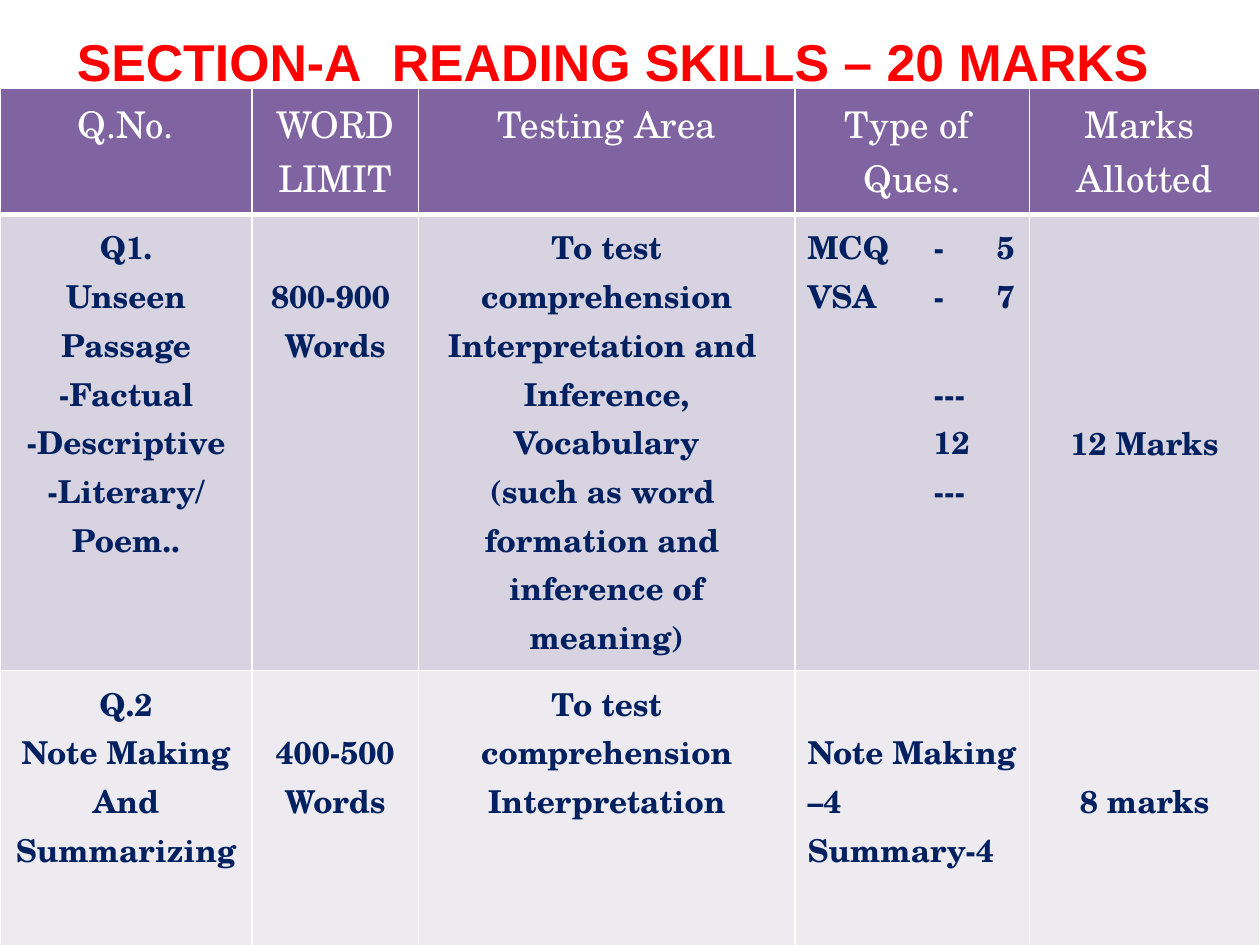
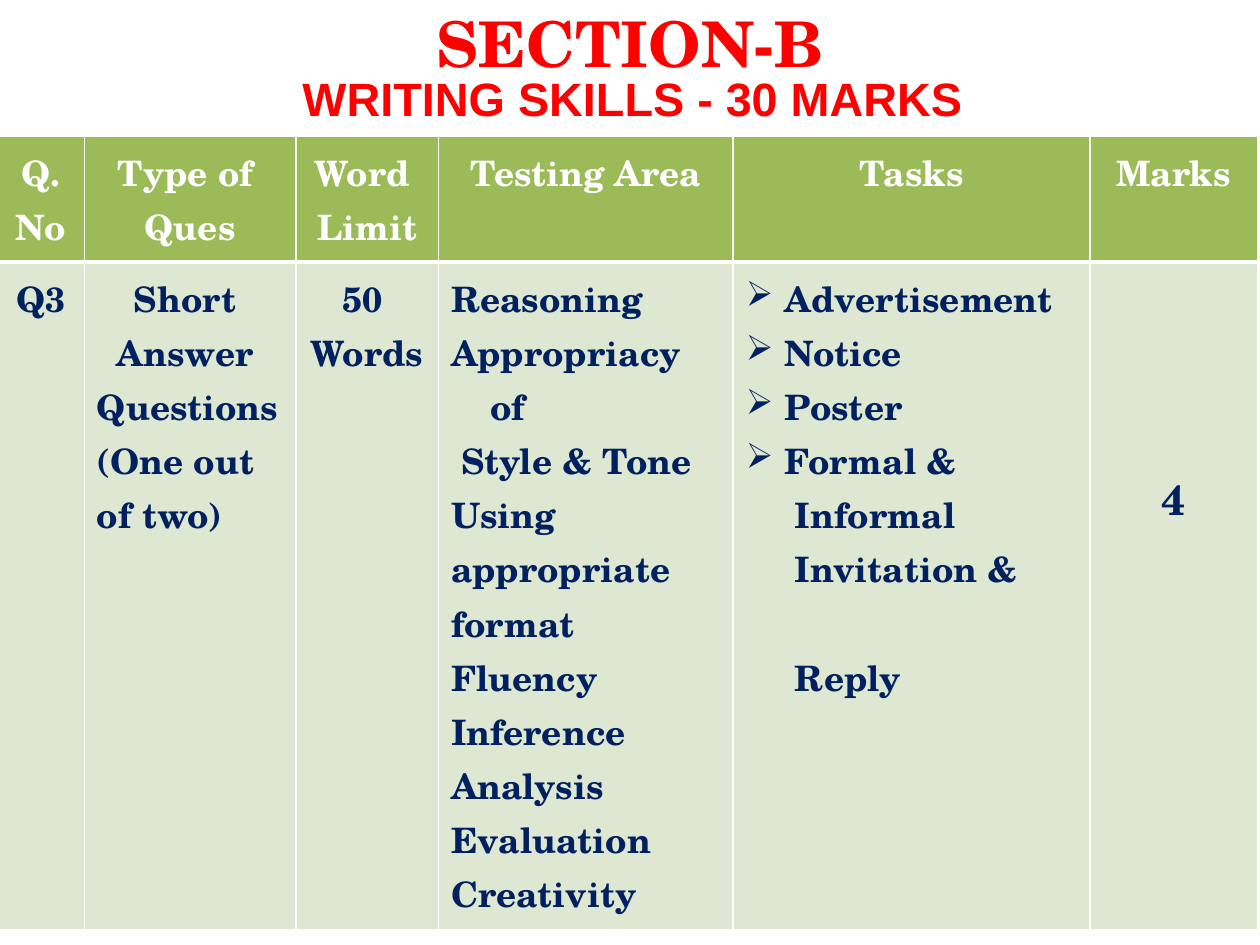
from dataclasses import dataclass
from typing import NamedTuple

from lxml import etree
from pptx import Presentation
from pptx import util as u
from pptx.dml.color import RGBColor
from pptx.enum import text
from pptx.oxml import ns

LEFT, CENTER = text.PP_ALIGN.LEFT, text.PP_ALIGN.CENTER


@dataclass(frozen=True)
class Theme:
    """Colours, fonts, type sizes and the grid shared by the slides."""
    white: str = "FFFFFF"
    red: str = "FF0000"
    navy: str = "002060"
    serif: str = "TeX Gyre Schola"
    sans: str = "Arial"
    line_height: float = 1.55
    unit: float = 0.1
    columns: int = 100
    rows: int = 75


THEME = Theme()


class Box(NamedTuple):
    """A rectangle in grid columns and rows."""
    left: float
    top: float
    width: float
    height: float


class Line(NamedTuple):
    """A paragraph with its indents in grid units."""
    text: str
    align: text.PP_ALIGN | None = None
    left: float = 0
    hang: float = 0
    bullet: str = ""
    tabs: tuple[float, ...] = ()
    lines_before: int = 0


class Cell(NamedTuple):
    """Table cell content, lowered by a number of text lines."""
    lines: list[str | Line]
    align: text.PP_ALIGN = CENTER
    lines_above: int = 0
    size: float | None = None


class Row(NamedTuple):
    """A table row with its look."""
    height: float
    cells: list[Cell]
    fill: str
    size: float
    color: str = THEME.navy
    bold: bool = True
    bottom_border: float = 1


class Grid(NamedTuple):
    """A table with its column widths."""
    left: float
    top: float
    widths: list[float]
    rows: list[Row]


def span(units: float) -> u.Length:
    """Convert grid units to a length."""
    return u.Inches(round(units * THEME.unit, 3))


def set_layout(paragraph, line: Line) -> None:
    """Set the indents, bullet and tab stops of a paragraph."""
    properties = paragraph._p.get_or_add_pPr()
    properties.set("marL", str(span(line.left)))
    properties.set("indent", str(span(-line.hang)))
    if line.bullet:
        etree.SubElement(properties, ns.qn("a:buChar"), char=line.bullet)
    else:
        etree.SubElement(properties, ns.qn("a:buNone"))
    if line.tabs:
        stops = etree.SubElement(properties, ns.qn("a:tabLst"))
        for position in line.tabs:
            etree.SubElement(stops, ns.qn("a:tab"), pos=str(span(position)), algn="l")


def write_text(frame, lines: list[str | Line], *, size: float, color: str,
               font: str = THEME.serif, bold: bool = True,
               align: text.PP_ALIGN = CENTER) -> None:
    """Fill a text frame with formatted paragraphs."""
    for index, item in enumerate(lines):
        line = item if isinstance(item, Line) else Line(item)
        paragraph = frame.add_paragraph() if index else frame.paragraphs[0]
        set_layout(paragraph, line)
        paragraph.alignment = align if line.align is None else line.align
        paragraph.space_before = u.Pt(line.lines_before * size * THEME.line_height)
        run = paragraph.add_run()
        run.text = line.text
        run.font.size, run.font.bold, run.font.name = u.Pt(size), bold, font
        run.font.color.rgb = RGBColor.from_string(color)


def write_heading(shape, box: Box, line: str | Line, *, inset: float = 1, **style) -> None:
    """Place a placeholder and write its heading."""
    shape.left, shape.top, shape.width, shape.height = map(span, box)
    frame = shape.text_frame
    frame.word_wrap = True
    frame.auto_size = text.MSO_AUTO_SIZE.NONE
    frame.vertical_anchor = text.MSO_ANCHOR.MIDDLE
    frame.margin_left = span(inset)
    write_text(frame, [line], color=THEME.red, **style)


def set_borders(cell, bottom: float) -> None:
    """Draw white lines on the four sides of a cell."""
    properties = cell._tc.get_or_add_tcPr()
    for side, width in zip("LRTB", (1, 1, 1, bottom)):
        border = etree.SubElement(properties, ns.qn(f"a:ln{side}"), w=str(u.Pt(width)))
        fill = etree.SubElement(border, ns.qn("a:solidFill"))
        etree.SubElement(fill, ns.qn("a:srgbClr"), val=THEME.white)


def add_grid(slide, grid: Grid) -> None:
    """Add a table and fill its cells."""
    table = slide.shapes.add_table(
        len(grid.rows), len(grid.widths), span(grid.left), span(grid.top),
        span(sum(grid.widths)), span(sum(row.height for row in grid.rows))).table
    table.first_row = table.horz_banding = False
    for column, width in zip(table.columns, grid.widths):
        column.width = span(width)
    for row, table_row in zip(grid.rows, table.rows):
        table_row.height = span(row.height)
        for content, cell in zip(row.cells, table_row.cells):
            size = content.size or row.size
            set_borders(cell, row.bottom_border)
            cell.fill.solid()
            cell.fill.fore_color.rgb = RGBColor.from_string(row.fill)
            cell.margin_left = cell.margin_right = span(1)
            cell.margin_bottom = span(0.7)
            cell.margin_top = span(0.7) + u.Pt(content.lines_above * size * THEME.line_height)
            write_text(cell.text_frame, content.lines, size=size, color=row.color,
                       bold=row.bold, align=content.align)


def header_row(labels: list[list[str]], fill: str, size: float, bold: bool) -> Row:
    """Make a table's header row."""
    return Row(10, [Cell(label) for label in labels], fill, size, THEME.white, bold, 3)


def mark_lines(*texts: str) -> list[Line]:
    """Make lines that share the tab stops of the mark counts."""
    return [Line(item, tabs=(6.2, 8.2)) for item in texts]


def reading_table() -> Grid:
    """Describe the reading skills table."""
    header = header_row([["Q.No."], ["WORD", "LIMIT"], ["Testing Area"],
                         ["Type of ", "Ques."], ["Marks ", "Allotted"]], "8064A2", 21, False)
    counts = mark_lines("MCQ\t-\t5", "VSA\t-\t7", "\t\t---", "\t\t12", "\t\t---")
    counts[2] = counts[2]._replace(lines_before=1)
    passage = Row(36.2, [
        Cell(["Q1.", "Unseen Passage", "-Factual", "-Descriptive", "-Literary/Poem.."]),
        Cell(["800-900 ", "Words"], lines_above=1),
        Cell(["To test comprehension", "Interpretation and ", "Inference, Vocabulary",
              "(such as word ", "formation and ", "inference of meaning)"]),
        Cell(counts, LEFT),
        Cell(["12 Marks"], lines_above=4),
    ], "D8D3E0", 18)
    notes = Row(21.9, [
        Cell(["Q.2", "Note Making", "And", "Summarizing"]),
        Cell(["400-500", "Words"], lines_above=1),
        Cell(["To test comprehension", "Interpretation"]),
        Cell(["Note Making", "–4", "Summary-4"], LEFT, lines_above=1),
        Cell(["8 marks"], lines_above=2),
    ], "EDEAF0", 18)
    return Grid(0, 7, [20, 13.2, 29.9, 18.6, 18.3], [header, passage, notes])


def writing_table() -> Grid:
    """Describe the writing skills table."""
    header = header_row([["Q.No"], ["Type of ", "Ques"], ["Word ", "Limit"],
                         ["Testing Area"], ["Tasks"], ["Marks"]], "9BBB59", 20, True)
    skills = [Line(skill, left=3.1, hang=3.1) for skill in (
        "Reasoning", "Appropriacy of", "Style & Tone", "Using", "appropriate", "format",
        "Fluency", "Inference", "Analysis", "Evaluation", "Creativity")]
    skills[2] = Line("Style & Tone", left=0.8)
    tasks = [Line(task, left=3.1, hang=3.1, bullet="➢")
             for task in ("Advertisement", "Notice", "Poster", "Formal &")]
    tasks += [Line("Informal", left=3.9), Line("Invitation &", left=3.9),
              Line("Reply", left=3.9, lines_before=1)]
    short_answers = Row(48.7, [
        Cell(["Q3"]),
        Cell(["Short ", "Answer ", Line("Questions", LEFT), Line("(One out of two)", LEFT)]),
        Cell(["50 ", "Words"]),
        Cell(skills, LEFT),
        Cell(tasks, LEFT),
        Cell(["4"], lines_above=3, size=24),
    ], "DEE7D1", 20)
    return Grid(-0.2, 10.8, [6.9, 16.8, 11.3, 23.4, 28.3, 13.3], [header, short_answers])


def main() -> None:
    """Build and save the two slides."""
    presentation = Presentation()
    presentation.slide_width, presentation.slide_height = span(THEME.columns), span(THEME.rows)
    layout = presentation.slide_layouts[1]

    reading = presentation.slides.add_slide(layout)
    title = reading.shapes.title._element
    title.getparent().remove(title)
    write_heading(reading.placeholders[1], Box(4.3, 0.9, 92.9, 7.9),
                  Line("SECTION-A\tREADING SKILLS – 20 MARKS", tabs=(28.1,)),
                  inset=1.8, size=29.6, font=THEME.sans, align=LEFT)
    add_grid(reading, reading_table())

    writing = presentation.slides.add_slide(layout)
    write_heading(writing.placeholders[1], Box(4.3, 5, 92.9, 5.6),
                  "WRITING SKILLS - 30 MARKS ", size=26.7, font=THEME.sans)
    write_heading(writing.shapes.title, Box(0, 0, 100, 6.7), "SECTION-B", size=36)
    add_grid(writing, writing_table())

    presentation.save("out.pptx")


if __name__ == "__main__":
    main()
